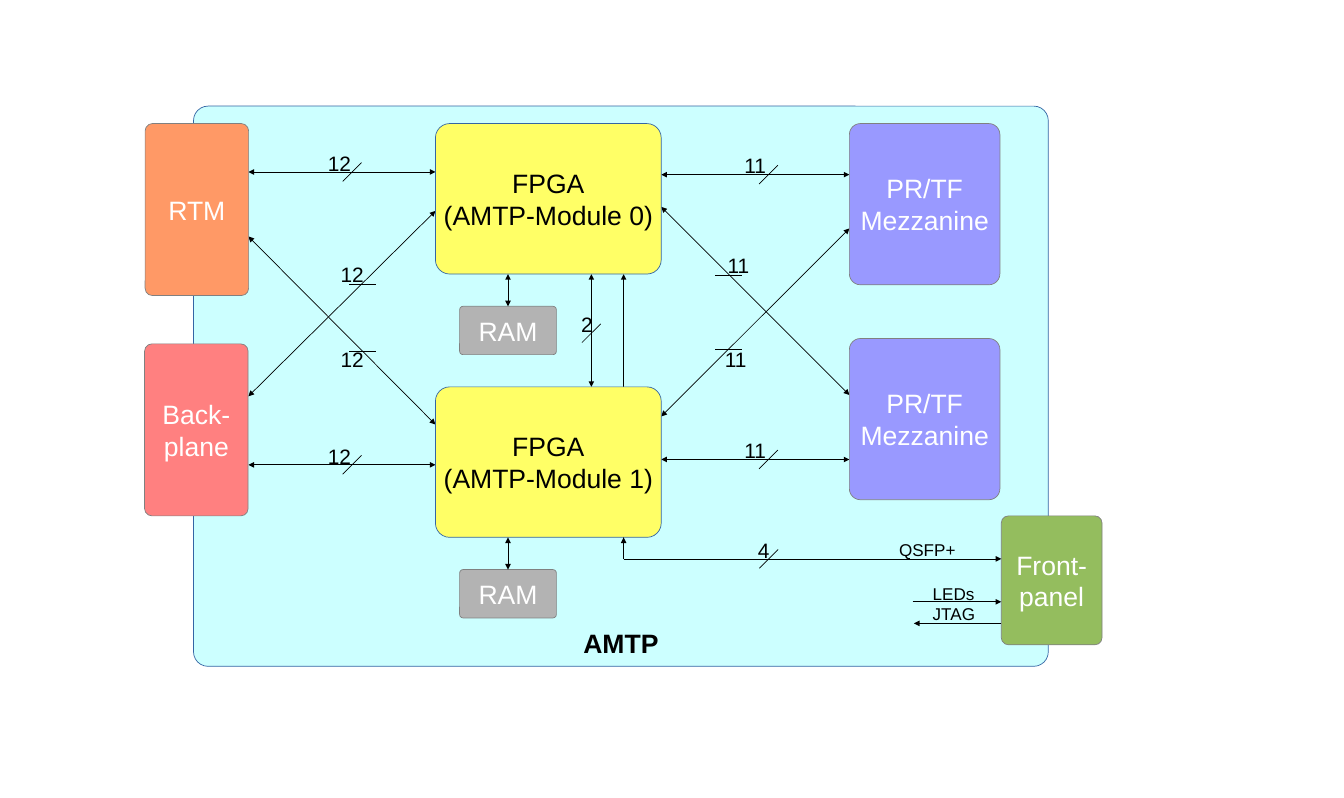
from lxml import etree
from pptx import Presentation
from pptx.dml.color import RGBColor
from pptx.enum.shapes import MSO_CONNECTOR, MSO_SHAPE
from pptx.enum.text import MSO_ANCHOR, PP_ALIGN
from pptx.oxml.ns import qn
from pptx.util import Cm, Pt

BLACK = RGBColor(0x00, 0x00, 0x00)
WHITE = RGBColor(0xFF, 0xFF, 0xFF)
BLUE = RGBColor(0x34, 0x65, 0xA4)
GRAY = RGBColor(0x80, 0x80, 0x80)
CYAN = RGBColor(0xCC, 0xFF, 0xFF)
YELLOW = RGBColor(0xFF, 0xFF, 0x66)
RED = RGBColor(0xFF, 0x80, 0x80)
ORANGE = RGBColor(0xFF, 0x99, 0x66)
GREEN = RGBColor(0x94, 0xBD, 0x5E)
SILVER = RGBColor(0xB3, 0xB3, 0xB3)
VIOLET = RGBColor(0x99, 0x99, 0xFF)


def write(sp, lines, size, color, align, anchor, margin_x, margin_y, bold=False):
    tf = sp.text_frame
    tf.vertical_anchor = anchor
    tf.margin_left = tf.margin_right = Cm(margin_x)
    tf.margin_top = tf.margin_bottom = Cm(margin_y)
    for i, text in enumerate(lines):
        p = tf.add_paragraph() if i else tf.paragraphs[0]
        p.text = text
        p.alignment = align
        p.font.name = "Arial"
        p.font.size = Pt(size)
        p.font.bold = bold
        p.font.color.rgb = color
    return tf


def add_block(s, x, y, w, h, radius, lines, fill, line=GRAY, color=WHITE,
              anchor=MSO_ANCHOR.MIDDLE, margin=0.1, bold=False):
    sp = s.shapes.add_shape(MSO_SHAPE.ROUNDED_RECTANGLE, Cm(x), Cm(y), Cm(w), Cm(h))
    sp.adjustments[0] = radius / min(w, h)
    sp.shadow.inherit = False
    sp.fill.solid()
    sp.fill.fore_color.rgb = fill
    sp.line.color.rgb = line
    sp.line.width = Pt(0.75)
    tf = write(sp, lines, 28, color, PP_ALIGN.CENTER, anchor, margin, 0.13, bold)
    tf.word_wrap = False


def add_line(s, x1, y1, x2, y2, ends=()):
    cn = s.shapes.add_connector(MSO_CONNECTOR.STRAIGHT, Cm(x1), Cm(y1), Cm(x2), Cm(y2))
    cn.line.color.rgb = BLACK
    cn.line.width = Pt(0.75)
    ln = cn.line._get_or_add_ln()
    for end in ends:
        etree.SubElement(ln, qn(f"a:{end}"), type="triangle")
    etree.SubElement(cn._element.spPr, qn("a:effectLst"))


def add_arrow(s, x1, y1, x2, y2):
    add_line(s, x1, y1, x2, y2, ("tailEnd",))


def add_link(s, x1, y1, x2, y2):
    add_line(s, x1, y1, x2, y2, ("headEnd", "tailEnd"))


def add_count(s, x, y, text, align=PP_ALIGN.LEFT):
    tb = s.shapes.add_textbox(Cm(x), Cm(y), Cm(1.15), Cm(1.07))
    tf = write(tb, [text], 22, BLACK, align, MSO_ANCHOR.MIDDLE, 0.1, 0.1)
    tf.word_wrap = True


def add_signal(s, x, y, text):
    tb = s.shapes.add_textbox(Cm(x), Cm(y), Cm(2.8), Cm(0.96))
    tf = write(tb, [text], 18, BLACK, PP_ALIGN.LEFT, MSO_ANCHOR.BOTTOM, 0.25, 0.13)
    tf.word_wrap = True


def add_slash(s, x, y, text, dx=-0.65, align=PP_ALIGN.LEFT):
    add_line(s, x, y + 0.35, x + 0.7, y - 0.35)
    add_count(s, x + dx, y - 0.87, text, align)


def bus_lane(s, x, y, w, count, straight, falling, rising, slash_x, ticks):
    for dy in straight:
        add_link(s, x, y + dy, x + w, y + dy)
        add_slash(s, x + slash_x, y + dy, count)
    for start, end in (falling, rising):
        add_link(s, x, y + start, x + w, y + end)
    for tick_x, tick_y, label_x, label_y in ticks:
        add_line(s, x + tick_x, y + tick_y, x + tick_x + 1, y + tick_y)
        add_count(s, x + label_x, y + label_y, count)


def fpga_links(s, x, y, pitch):
    bottom = y + 5.6
    add_link(s, x + 5.8, y + pitch, x + 5.8, bottom)
    add_slash(s, x + 5.45, y + 7.8, "2", align=PP_ALIGN.RIGHT)
    add_arrow(s, x + 7, y + pitch + 6.2, x + 7, bottom)


def fpga_module(s, x, y, number):
    add_block(s, x, y, 8.4, 5.6, 0.53, ["FPGA", f"(AMTP-Module {number})"],
              YELLOW, BLUE, BLACK, margin=0.25)
    add_block(s, x + 0.9, y + 6.8, 3.6, 1.8, 0.13, ["RAM"], SILVER, margin=0.25)
    add_link(s, x + 2.7, y + 6.8, x + 2.7, y + 5.6)


def front_panel(s, x, y):
    add_block(s, x, y, 3.75, 4.8, 0.27, ["Front-", "panel"], GREEN)
    add_arrow(s, x - 14.05, y + 1.6, x, y + 1.6)
    add_arrow(s, x - 14.05, y + 1.6, x - 14.05, y + 0.8)
    add_slash(s, x - 9, y + 1.6, "4", dx=-0.15)
    add_arrow(s, x - 3.3, y + 3.2, x, y + 3.2)
    add_arrow(s, x, y + 4, x - 3.25, y + 4)
    for dx, dy, text in [(-4.05, 0.8, "QSFP+"), (-2.8, 2.44, "LEDs"), (-2.8, 3.2, "JTAG")]:
        add_signal(s, x + dx, y + dy, text)


def block_diagram(s, x, y):
    fpga_x, fpga_y, pitch = x + 9, y + 0.65, 9.8
    add_block(s, x, y, 31.8, 20.85, 0.54, ["AMTP"], CYAN, BLUE, BLACK,
              MSO_ANCHOR.BOTTOM, 0.25, True)
    bus_lane(s, x + 2.04, fpga_y, 6.96, "12", (1.8, 12.7), (4.2, 11.2), (10.15, 3.25), 3.51,
             [(3.76, 5.97, 3.33, 5.08), (3.76, 8.48, 3.33, 8.25)])
    bus_lane(s, x + 17.4, fpga_y, 7, "11", (1.9, 12.5), (3.1, 10.1), (10.9, 3.9), 3.64,
             [(2, 5.64, 2.37, 4.75), (2, 8.4, 2.27, 8.23)])
    fpga_links(s, fpga_x, fpga_y, pitch)
    add_block(s, x - 1.8, fpga_y, 3.85, 6.4, 0.27, ["RTM"], ORANGE)
    add_block(s, x - 1.82, fpga_y + 8.2, 3.85, 6.4, 0.27, ["Back-", "plane"], RED)
    for i in range(2):
        add_block(s, x + 24.4, fpga_y + i * 8, 5.6, 6, 0.41, ["PR/TF", "Mezzanine"], VIOLET)
        fpga_module(s, fpga_x, fpga_y + i * pitch, i)
    front_panel(s, x + 30.05, y + 15.25)


def main():
    prs = Presentation()
    prs.slide_width = Cm(50)
    prs.slide_height = Cm(29.7)
    s = prs.slides.add_slide(prs.slide_layouts[6])
    block_diagram(s, 7.2, 3.95)
    prs.save("out.pptx")


if __name__ == "__main__":
    main()
